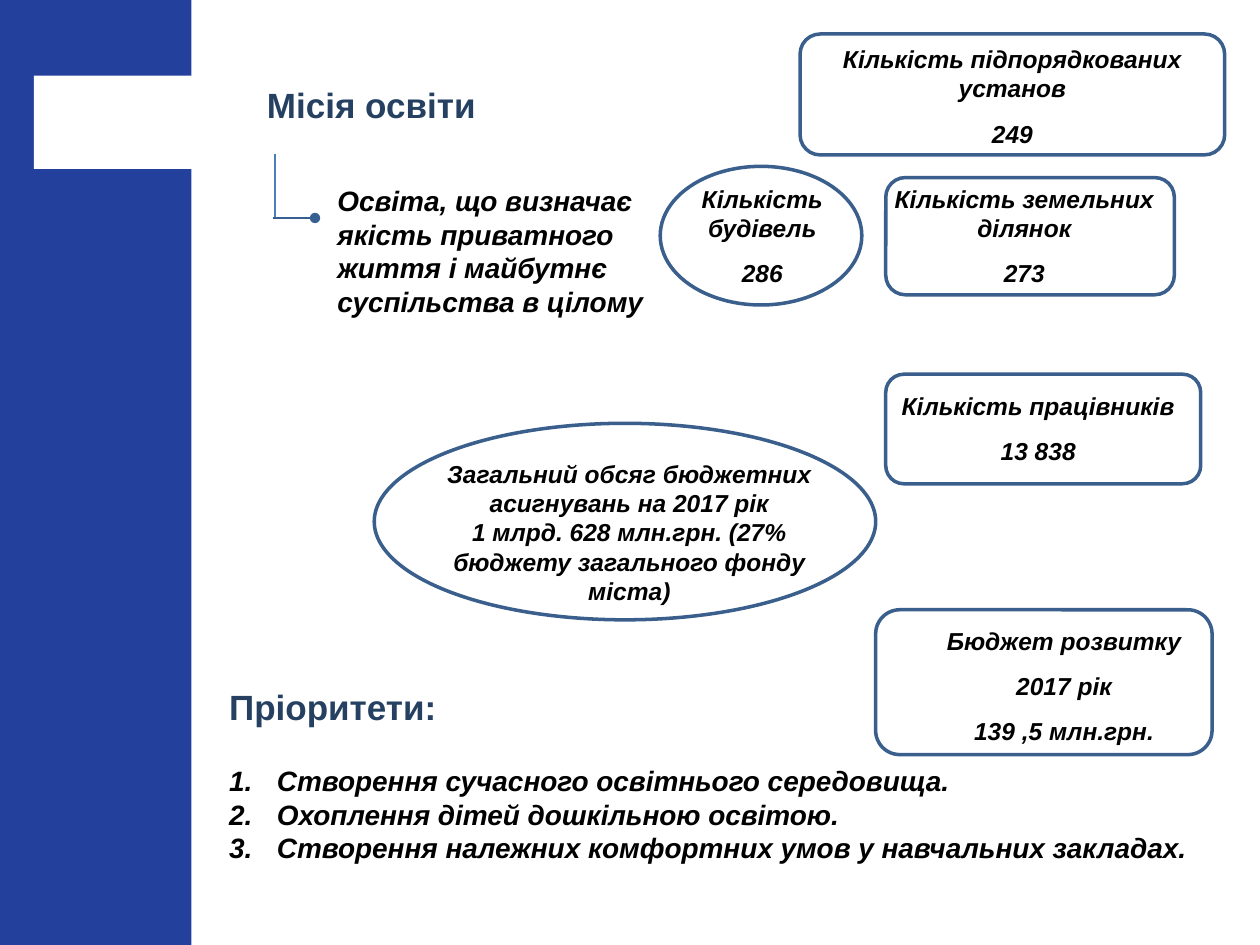
from lxml.etree import SubElement
from pptx import Presentation
from pptx.dml.color import RGBColor
from pptx.enum.shapes import MSO_CONNECTOR as Link, MSO_SHAPE as Shape
from pptx.enum.text import MSO_ANCHOR as Anchor, PP_ALIGN as Align
from pptx.oxml.ns import qn
from pptx.util import Inches, Pt

WIDTH, HEIGHT = Inches(10), Inches(7.5)
BLUE, NAVY, OUTLINE = "23409D", "254061", "3A5F8C"
WHITE, BLACK = "FFFFFF", "000000"

FACTS = [
    (Shape.ROUNDED_RECTANGLE, (63.5, 3.6, 33.7, 12.8), (64.8, 4, 31.1, 12.4), 9,
     ["Кількість підпорядкованих установ", "249"]),
    (Shape.OVAL, (52.4, 17.6, 16, 14.67), (53.1, 18.8, 14.8, 12.4), 9,
     ["Кількість будівель", "286"]),
    (Shape.ROUNDED_RECTANGLE, (70.3, 18.8, 22.9, 12.4), (68.8, 18.8, 25, 12.4), 9,
     ["Кількість земельних ділянок", "273"]),
    (Shape.ROUNDED_RECTANGLE, (70.3, 39.6, 25, 11.6), (70.3, 40.67, 24.2, 9.33), 9,
     ["Кількість працівників", "13 838"]),
    (Shape.OVAL, (29.7, 44.8, 39.8, 20.8), (34.4, 47.87, 31.1, 17.07), 0,
     ["Загальний обсяг бюджетних", "асигнувань на 2017 рік",
      "1 млрд. 628 млн.грн. (27% бюджету загального фонду міста)"]),
    (Shape.ROUNDED_RECTANGLE, (69.5, 64.53, 26.7, 15.33), (68.9, 65.6, 31.1, 14.13), 9,
     ["Бюджет розвитку", "2017 рік", "139 ,5 млн.грн."]),
]

PRIORITIES = [
    "Створення сучасного освітнього середовища.",
    "Охоплення дітей дошкільною освітою.",
    "Створення належних комфортних умов у навчальних закладах.",
]


def color(code):
    return RGBColor.from_string(code)


def across(percent):
    return round(WIDTH * percent / 100)


def down(percent):
    return round(HEIGHT * percent / 100)


def place(left, top, width, height):
    return across(left), down(top), across(width), down(height)


def add_figure(page, kind, area, fill=None, outline=None):
    figure = page.shapes.add_shape(kind, *place(*area))
    figure.shadow.inherit = False
    if fill:
        figure.fill.solid()
        figure.fill.fore_color.rgb = color(fill)
    else:
        figure.fill.background()
    if outline:
        figure.line.color.rgb = color(outline)
        figure.line.width = Pt(2)
    else:
        figure.line.fill.background()


def add_box(page, area, anchor=Anchor.TOP):
    box = page.shapes.add_textbox(*place(*area))
    box.text_frame.word_wrap = True
    box.text_frame.vertical_anchor = anchor
    return box.text_frame


def add_para(frame, text, size, ink=BLACK, italic=True, align=Align.LEFT, before=0):
    first = frame.paragraphs[0]
    is_first = not first.runs
    para = first if is_first else frame.add_paragraph()
    para.alignment = align
    para.space_before = Pt(0 if is_first else before)
    span = para.add_run()
    span.text = text
    span.font.name = "Arial"
    span.font.size = Pt(size)
    span.font.bold = True
    span.font.italic = italic
    span.font.color.rgb = color(ink)
    return para


def number(para):
    props = para._p.get_or_add_pPr()
    props.set("marL", str(Inches(0.38)))
    props.set("indent", str(-Inches(0.38)))
    SubElement(props, qn("a:buFont"), typeface="+mj-lt")
    SubElement(props, qn("a:buAutoNum"), type="arabicPeriod")


def add_line(page, start, end, ink, dot=False):
    line = page.shapes.add_connector(
        Link.STRAIGHT, across(start[0]), down(start[1]), across(end[0]), down(end[1]))
    line.line.color.rgb = color(ink)
    line.line.width = Pt(1.25)
    if dot:
        SubElement(line.line._get_or_add_ln(), qn("a:tailEnd"), type="oval")
    SubElement(line._element.spPr, qn("a:effectLst"))


def add_fact(page, kind, outline_area, text_area, before, lines):
    add_figure(page, kind, outline_area, outline=OUTLINE)
    frame = add_box(page, text_area)
    for text in lines:
        add_para(frame, text, 14, align=Align.CENTER, before=before)


def add_mission(page):
    title = add_box(page, (20.2, 5.87, 51.8, 10.4), Anchor.MIDDLE)
    add_para(title, "Місія освіти", 20, NAVY, italic=False)
    mission = add_box(page, (25.8, 18.8, 27.3, 15.73))
    add_para(mission, "Освіта, що визначає якість приватного життя "
                      "і майбутнє суспільства в цілому", 16)
    add_line(page, (21.8, 16.27), (21.8, 23.07), "4B7EBC")
    add_line(page, (21.7, 23.07), (25, 23.07), "376092", dot=True)


def add_priorities(page):
    frame = add_box(page, (17.2, 71.87, 79.7, 20.67))
    add_para(frame, "Пріоритети:", 20, NAVY, italic=False)
    for index, text in enumerate(PRIORITIES):
        number(add_para(frame, text, 16, before=0 if index else 20.7))


def main():
    deck = Presentation()
    deck.slide_width, deck.slide_height = WIDTH, HEIGHT
    page = deck.slides.add_slide(deck.slide_layouts[6])
    add_figure(page, Shape.RECTANGLE, (0, 0, 15.2, 100), fill=BLUE)
    add_figure(page, Shape.RECTANGLE, (2.7, 8, 13.3, 9.87), fill=WHITE)
    add_mission(page)
    for fact in FACTS:
        add_fact(page, *fact)
    add_priorities(page)
    deck.save("out.pptx")


if __name__ == "__main__":
    main()
